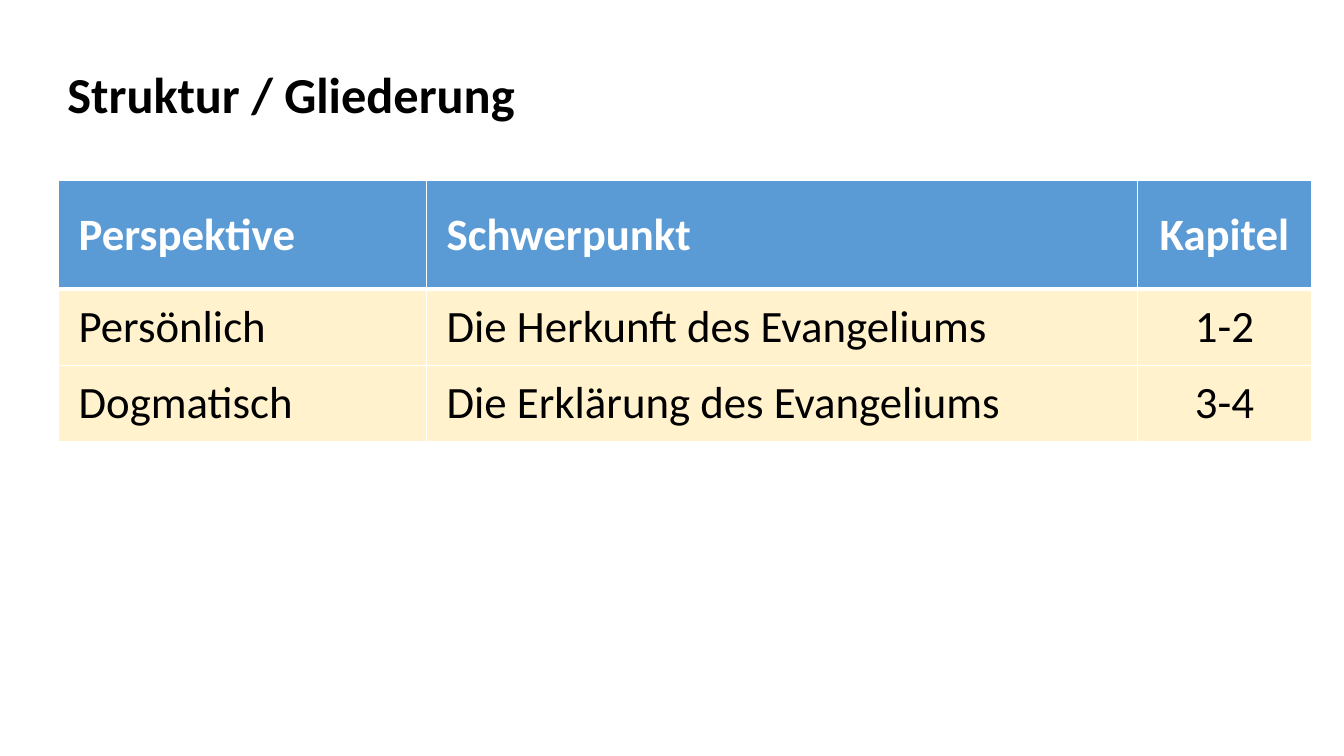
from dataclasses import dataclass

from lxml.etree import SubElement
from pptx import Presentation
from pptx.dml.color import RGBColor
from pptx.enum.text import MSO_ANCHOR, MSO_AUTO_SIZE, PP_ALIGN
from pptx.oxml.ns import qn
from pptx.slide import Slide
from pptx.table import _Cell
from pptx.text.text import TextFrame
from pptx.util import Inches, Pt

WIDE, HIGH = Inches(13.33), Inches(7.5)
FONT = "Calibri"
BLACK = RGBColor(0x00, 0x00, 0x00)
WHITE = RGBColor(0xFF, 0xFF, 0xFF)
BLUE = RGBColor(0x5B, 0x9B, 0xD5)
CREAM = RGBColor(0xFF, 0xF2, 0xCC)


@dataclass(frozen=True)
class Look:
    size: int
    color: RGBColor
    bold: bool


@dataclass(frozen=True)
class Column:
    share: float
    align: PP_ALIGN
    texts: tuple[str, ...]


@dataclass(frozen=True)
class Row:
    share: float
    fill: RGBColor
    look: Look
    top: int
    bottom: int


TITLE = Look(36, BLACK, True)
HEAD = Look(32, WHITE, True)
BODY = Look(32, BLACK, False)

COLUMNS = (
    Column(3.65 / 13.33, PP_ALIGN.LEFT, ("Perspektive", "Persönlich", "Dogmatisch")),
    Column(7.05 / 13.33, PP_ALIGN.LEFT,
           ("Schwerpunkt", "Die Herkunft des Evangeliums", "Die Erklärung des Evangeliums")),
    Column(1.73 / 13.33, PP_ALIGN.CENTER, ("Kapitel", "1-2", "3-4")),
)
ROWS = (
    Row(1.08 / 7.5, BLUE, HEAD, 1, 3),
    Row(0.76 / 7.5, CREAM, BODY, 3, 1),
    Row(0.75 / 7.5, CREAM, BODY, 1, 1),
)


def across(share: float) -> int:
    return round(WIDE * share)


def down(share: float) -> int:
    return round(HIGH * share)


def write(frame: TextFrame, text: str, look: Look, align: PP_ALIGN) -> None:
    frame.text = text
    para = frame.paragraphs[0]
    para.alignment = align
    font = para.runs[0].font
    font.name, font.size, font.bold = FONT, Pt(look.size), look.bold
    font.color.rgb = look.color


def border(cell: _Cell, row: Row) -> None:
    """Give the cell white lines; call before the fill is set."""
    props = cell._tc.get_or_add_tcPr()
    for side, width in (("L", 1), ("R", 1), ("T", row.top), ("B", row.bottom)):
        line = SubElement(props, qn(f"a:ln{side}"), w=str(Pt(width)))
        fill = SubElement(line, qn("a:solidFill"))
        SubElement(fill, qn("a:srgbClr"), val=str(WHITE))


def add_title(slide: Slide) -> None:
    box = slide.shapes.add_textbox(across(0.57 / 13.33), down(0.58 / 7.5),
                                   across(4.69 / 13.33), down(0.71 / 7.5))
    frame = box.text_frame
    frame.word_wrap = False
    frame.auto_size = MSO_AUTO_SIZE.SHAPE_TO_FIT_TEXT
    write(frame, "Struktur / Gliederung", TITLE, PP_ALIGN.LEFT)


def add_outline(slide: Slide) -> None:
    table = slide.shapes.add_table(
        len(ROWS), len(COLUMNS), across(0.58 / 13.33), down(1.79 / 7.5),
        across(sum(col.share for col in COLUMNS)),
        down(sum(row.share for row in ROWS))).table
    for x, col in enumerate(COLUMNS):
        table.columns[x].width = across(col.share)
    for y, row in enumerate(ROWS):
        table.rows[y].height = down(row.share)
        for x, col in enumerate(COLUMNS):
            cell = table.cell(y, x)
            border(cell, row)
            cell.fill.solid()
            cell.fill.fore_color.rgb = row.fill
            cell.vertical_anchor = MSO_ANCHOR.MIDDLE
            cell.margin_left = cell.margin_right = Inches(0.2)
            cell.margin_top = cell.margin_bottom = 0
            write(cell.text_frame, col.texts[y], row.look, col.align)


def main() -> None:
    deck = Presentation()
    deck.slide_width, deck.slide_height = WIDE, HIGH
    slide = deck.slides.add_slide(deck.slide_layouts[6])
    add_title(slide)
    add_outline(slide)
    deck.save("out.pptx")


if __name__ == "__main__":
    main()
